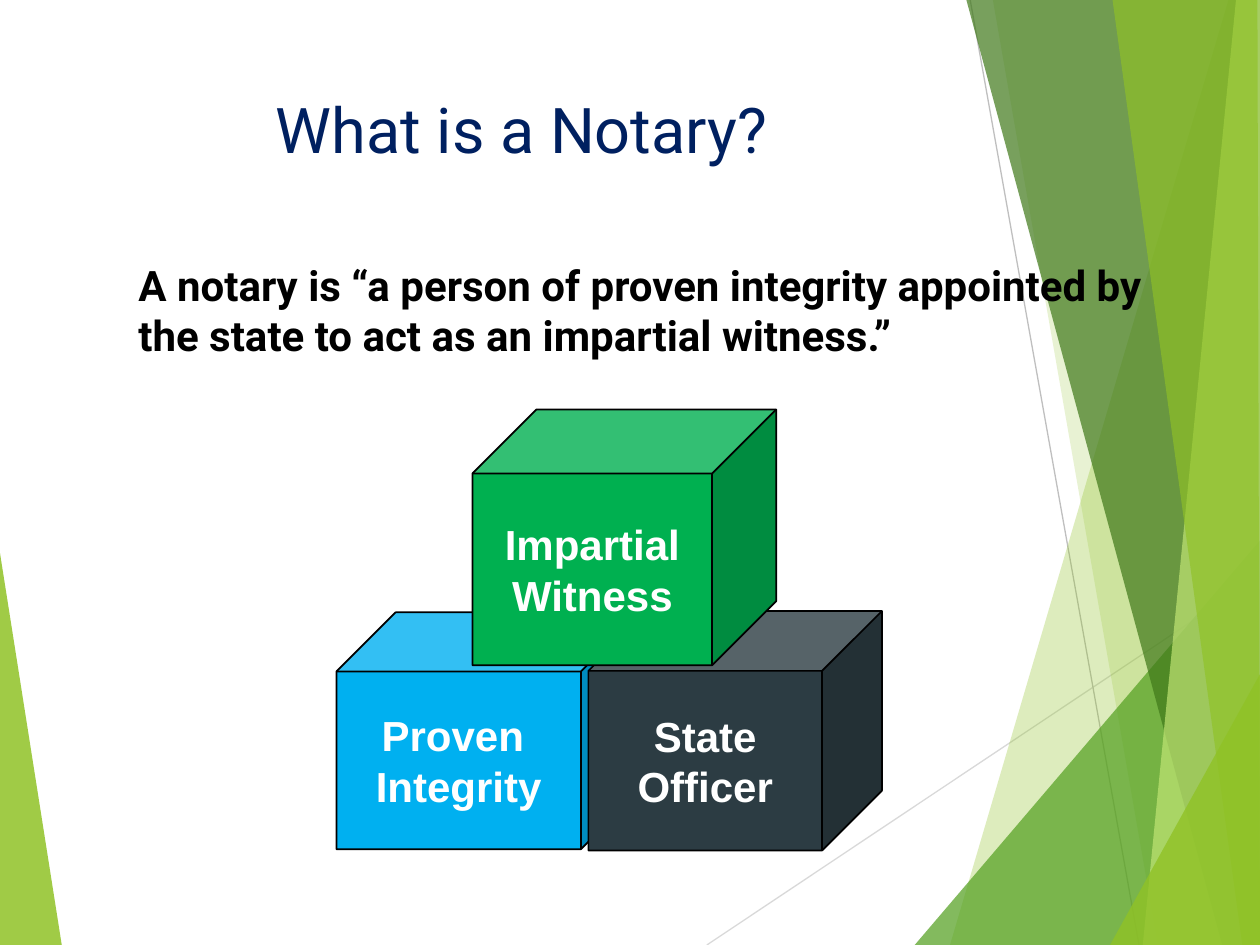
from dataclasses import dataclass

from lxml import etree
from pptx import Presentation
from pptx import util as u
from pptx.dml.color import RGBColor
from pptx.enum import shapes, text
from pptx.oxml import ns

SCALE = u.Inches(1) // 100
WIDTH, HEIGHT = 1000, 750


@dataclass(frozen=True)
class Theme:
    lime: str = "90C226"
    leaf: str = "54A021"
    forest: str = "3F7819"
    pale: str = "C0E474"
    light_grey: str = "D9D9D9"
    grey: str = "BFBFBF"
    navy: str = "002060"
    blue: str = "00B0F0"
    slate: str = "2C3C43"
    green: str = "00B050"
    black: str = "000000"
    white: str = "FFFFFF"
    slide_font: str = "Roboto"
    cube_font: str = "Arial"
    title_size: int = 36
    body_size: int = 24


@dataclass(frozen=True)
class Box:
    left: int
    top: int
    width: int
    height: int

    def emu(self) -> list[int]:
        return [px(n) for n in (self.left, self.top, self.width, self.height)]


@dataclass(frozen=True)
class Facet:
    points: tuple[tuple[int, int], ...]
    color: str
    opacity: int


@dataclass(frozen=True)
class Ray:
    start: tuple[int, int]
    end: tuple[int, int]
    color: str


@dataclass(frozen=True)
class Cube:
    box: Box
    color: str
    lines: tuple[str, str]
    wrap: bool


THEME = Theme()

LEFT_FACET = Facet(((0, 439), (49, HEIGHT), (0, HEIGHT)), THEME.lime, 85)

RAYS = (
    Ray((561, 750), (1000, 457), THEME.light_grey),
    Ray((770, 0), (904, 750), THEME.grey),
)

RIGHT_FACETS = (
    Facet(((975, 0), (754, 750), (1000, 750), (1000, 0)), THEME.lime, 30),
    Facet(((788, 0), (919, 750), (1000, 750), (1000, 0)), THEME.lime, 20),
    Facet(((726, 750), (1000, 429), (1000, 750)), THEME.leaf, 72),
    Facet(((767, 0), (970, 750), (1000, 750), (1000, 0)), THEME.forest, 70),
    Facet(((981, 0), (907, 750), (1000, 750), (1000, 0)), THEME.pale, 70),
    Facet(((883, 0), (986, 750), (1000, 750), (998, 0)), THEME.lime, 65),
    Facet(((881, 750), (1000, 535), (1000, 750)), THEME.lime, 80),
)

CUBES = (
    Cube(Box(267, 486, 241, 188), THEME.blue, ("Proven ", "Integrity"), False),
    Cube(Box(467, 485, 233, 190), THEME.slate, ("State", "Officer"), True),
    Cube(Box(375, 325, 241, 203), THEME.green, ("Impartial", "Witness"), False),
)


def px(length: int) -> int:
    return length * SCALE


def rgb(color: str) -> RGBColor:
    return RGBColor.from_string(color)


def paint(shape, color: str) -> None:
    shape.shadow.inherit = False
    shape.fill.solid()
    shape.fill.fore_color.rgb = rgb(color)


def add_span(para, words: str, font: str, size: int, color: str, bold: bool) -> None:
    span = para.add_run()
    span.text = words
    span.font.name = font
    span.font.size = u.Pt(size)
    span.font.bold = bold
    span.font.color.rgb = rgb(color)


def draw_facet(page, facet: Facet) -> None:
    first, *rest = facet.points
    builder = page.shapes.build_freeform(*first, scale=SCALE)
    builder.add_line_segments(rest, close=True)
    shape = builder.convert_to_shape()
    paint(shape, facet.color)
    shape.line.fill.background()
    tint = shape.fill._xPr.find(".//" + ns.qn("a:srgbClr"))
    etree.SubElement(tint, ns.qn("a:alpha"), val=str(facet.opacity * 1000))


def draw_ray(page, ray: Ray) -> None:
    line = page.shapes.add_connector(
        shapes.MSO_CONNECTOR.STRAIGHT,
        *(px(n) for n in ray.start + ray.end),
    )
    line.line.color.rgb = rgb(ray.color)
    line.line.width = u.Pt(0.75)
    etree.SubElement(line._element.spPr, ns.qn("a:effectLst"))


def draw_title(page, words: str, box: Box) -> None:
    title = page.shapes.title
    title.left, title.top, title.width, title.height = box.emu()
    frame = title.text_frame
    frame.auto_size = text.MSO_AUTO_SIZE.NONE
    frame.vertical_anchor = text.MSO_ANCHOR.TOP
    para = frame.paragraphs[0]
    para.alignment = text.PP_ALIGN.CENTER
    add_span(para, words, THEME.slide_font, THEME.title_size, THEME.navy, False)


def draw_definition(page, words: str, box: Box) -> None:
    frame = page.shapes.add_textbox(*box.emu()).text_frame
    frame.word_wrap = True
    add_span(frame.paragraphs[0], words, THEME.slide_font, THEME.body_size,
             THEME.black, True)


def draw_cube(page, cube: Cube) -> None:
    shape = page.shapes.add_shape(shapes.MSO_SHAPE.CUBE, *cube.box.emu())
    shape.adjustments[0] = 0.25
    paint(shape, cube.color)
    shape.line.color.rgb = rgb(THEME.black)
    shape.line.width = u.Pt(1)
    frame = shape.text_frame
    frame.word_wrap = cube.wrap
    frame.vertical_anchor = text.MSO_ANCHOR.MIDDLE
    for index, words in enumerate(cube.lines):
        para = frame.add_paragraph() if index else frame.paragraphs[0]
        para.alignment = text.PP_ALIGN.CENTER
        add_span(para, words, THEME.cube_font, THEME.body_size, THEME.white, True)


def main() -> None:
    deck = Presentation()
    deck.slide_width, deck.slide_height = px(WIDTH), px(HEIGHT)
    page = deck.slides.add_slide(deck.slide_layouts.get_by_name("Title Only"))
    draw_facet(page, LEFT_FACET)
    for ray in RAYS:
        draw_ray(page, ray)
    for facet in RIGHT_FACETS:
        draw_facet(page, facet)
    draw_title(page, "What is a Notary?", Box(67, 67, 694, 144))
    draw_definition(
        page,
        "A notary is “a person of proven integrity appointed by "
        "the state to act as an impartial witness.”",
        Box(100, 201, 842, 91),
    )
    for cube in CUBES:
        draw_cube(page, cube)
    deck.save("out.pptx")


if __name__ == "__main__":
    main()
